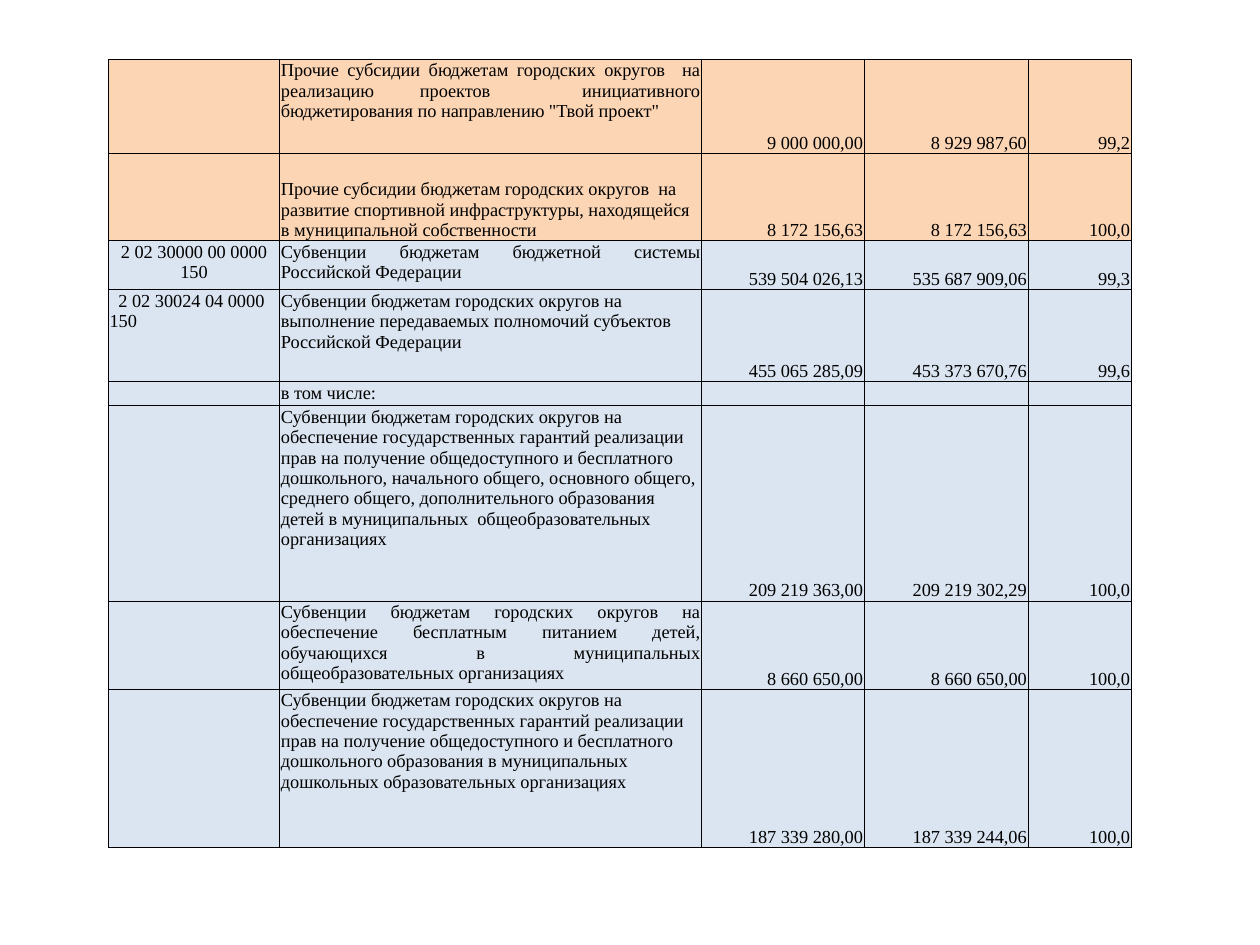
from lxml import etree
from pptx import Presentation
from pptx.dml.color import RGBColor
from pptx.enum.text import MSO_ANCHOR, PP_ALIGN
from pptx.oxml.ns import qn
from pptx.util import Inches, Pt

COLORS = {"subsidy": "FCD5B4", "subvention": "DBE5F1", "ink": "000000"}
LEFT, CENTER, RIGHT, JUSTIFY = PP_ALIGN.LEFT, PP_ALIGN.CENTER, PP_ALIGN.RIGHT, PP_ALIGN.JUSTIFY
TOP, BOTTOM = MSO_ANCHOR.TOP, MSO_ANCHOR.BOTTOM

COLUMN_WIDTHS = [1.36, 3.35, 1.29, 1.3, 0.82]

# Row height, fill, budget code, title, title alignment, title anchor, plan, actual, percent
BUDGET_ROWS = [
    (0.75, "subsidy", "",
     "Прочие субсидии бюджетам городских округов  на реализацию проектов  "
     "инициативного бюджетирования по направлению \"Твой проект\"",
     JUSTIFY, TOP, "9 000 000,00", "8 929 987,60", "99,2"),
    (0.69, "subsidy", "",
     "Прочие субсидии бюджетам городских округов  на развитие спортивной "
     "инфраструктуры, находящейся в муниципальной собственности",
     LEFT, BOTTOM, "8 172 156,63", "8 172 156,63", "100,0"),
    (0.39, "subvention", "2 02 30000 00 0000 150",
     "Субвенции бюджетам бюджетной системы Российской Федерации",
     JUSTIFY, TOP, "539 504 026,13", "535 687 909,06", "99,3"),
    (0.73, "subvention", "2 02 30024 04 0000 150",
     "Субвенции бюджетам городских округов на выполнение передаваемых "
     "полномочий субъектов Российской Федерации",
     LEFT, TOP, "455 065 285,09", "453 373 670,76", "99,6"),
    (0.19, "subvention", "", "в том числе:", LEFT, TOP, "", "", ""),
    (1.55, "subvention", "",
     "Субвенции бюджетам городских округов на обеспечение государственных "
     "гарантий реализации прав на получение общедоступного и бесплатного "
     "дошкольного, начального общего, основного общего, среднего общего, "
     "дополнительного образования детей в муниципальных  "
     "общеобразовательных организациях",
     LEFT, TOP, "209 219 363,00", "209 219 302,29", "100,0"),
    (0.7, "subvention", "",
     "Субвенции бюджетам городских округов на обеспечение бесплатным питанием "
     "детей, обучающихся в муниципальных общеобразовательных организациях",
     JUSTIFY, TOP, "8 660 650,00", "8 660 650,00", "100,0"),
    (1.26, "subvention", "",
     "Субвенции бюджетам городских округов на обеспечение государственных "
     "гарантий реализации прав на получение общедоступного и бесплатного "
     "дошкольного образования в муниципальных дошкольных образовательных "
     "организациях",
     LEFT, TOP, "187 339 280,00", "187 339 244,06", "100,0"),
]


class BudgetSlide:
    font_name = "Times New Roman"
    font_size = Pt(10.5)
    border_width = Pt(0.5)

    def __init__(self, slide):
        self.slide = slide

    def table(self, left, top, widths, heights):
        grid = self.slide.shapes.add_table(
            len(heights), len(widths), Inches(left), Inches(top),
            Inches(sum(widths)), Inches(sum(heights))).table
        grid.first_row = grid.horz_banding = False
        for column, width in zip(grid.columns, widths):
            column.width = Inches(width)
        for row, height in zip(grid.rows, heights):
            row.height = Inches(height)
        return grid

    def cell(self, cell, text, fill, align, anchor, indent=0):
        cell.margin_left = cell.margin_right = cell.margin_top = Inches(0.01)
        cell.margin_bottom = 0
        cell.vertical_anchor = anchor
        paragraph = cell.text_frame.paragraphs[0]
        paragraph.alignment = align
        paragraph.font.name = self.font_name
        paragraph.font.size = self.font_size
        paragraph.font.color.rgb = RGBColor.from_string(COLORS["ink"])
        if text:
            paragraph.add_run().text = text
        else:
            # An empty cell takes its line height from the end mark
            etree.SubElement(paragraph._p, qn("a:endParaRPr"), sz=str(int(self.font_size.pt * 100)))
        if indent:
            paragraph._p.get_or_add_pPr().set("indent", str(Inches(indent)))
        self.borders(cell)
        cell.fill.solid()
        cell.fill.fore_color.rgb = RGBColor.from_string(COLORS[fill])

    def borders(self, cell):
        properties = cell._tc.get_or_add_tcPr()
        for side in ("a:lnL", "a:lnR", "a:lnT", "a:lnB"):
            line = etree.SubElement(properties, qn(side), w=str(self.border_width))
            solid = etree.SubElement(line, qn("a:solidFill"))
            etree.SubElement(solid, qn("a:srgbClr"), val=COLORS["ink"])


def main():
    presentation = Presentation()
    presentation.slide_width, presentation.slide_height = Inches(10), Inches(7.5)
    page = BudgetSlide(presentation.slides.add_slide(presentation.slide_layouts[6]))

    # Budget execution table
    budget = page.table(0.86, 0.47, COLUMN_WIDTHS, [row[0] for row in BUDGET_ROWS])
    for index, (_, fill, code, title, align, anchor, *amounts) in enumerate(BUDGET_ROWS):
        # Group codes are centred, codes below them are indented
        is_group = code.startswith("2 02 30000")
        page.cell(budget.cell(index, 0), code, fill, CENTER if is_group else LEFT, TOP,
                  indent=0.07 if code and not is_group else 0)
        page.cell(budget.cell(index, 1), title, fill, align, anchor)
        for column, amount in enumerate(amounts, start=2):
            page.cell(budget.cell(index, column), amount, fill, RIGHT, BOTTOM)

    presentation.save("out.pptx")


if __name__ == "__main__":
    main()
